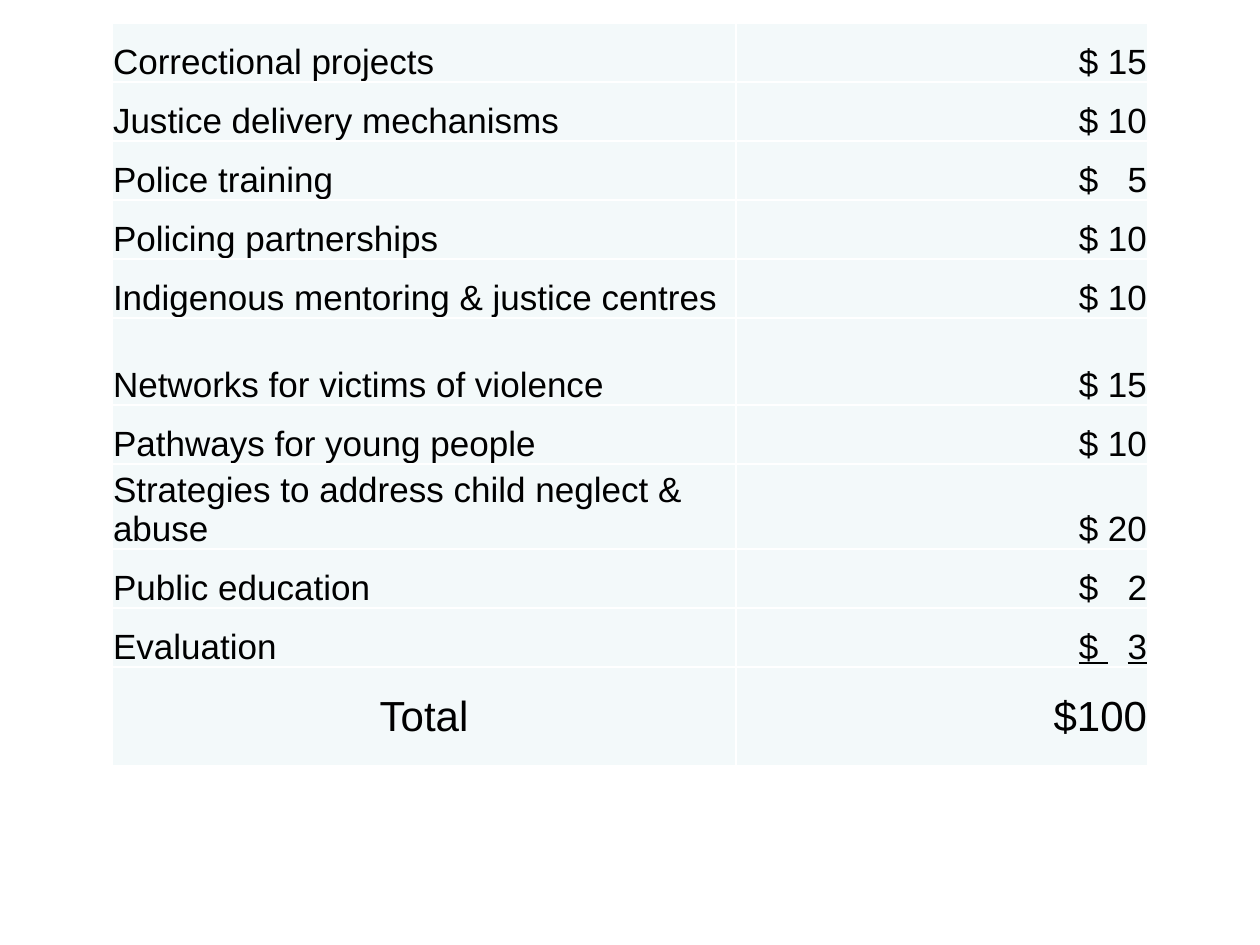
from dataclasses import dataclass

import pptx
import pptx.dml.color
import pptx.enum.text
import pptx.oxml
import pptx.oxml.ns
import pptx.util

EMU_PER_PX = 914400 / 126
COLORS = {"cell": "F3F9FA", "border": "FFFFFF", "text": "000000"}
ALIGN = pptx.enum.text.PP_ALIGN
ANCHOR = pptx.enum.text.MSO_ANCHOR
TABLE_LEFT, TABLE_TOP = 112, 23
COLUMN_WIDTHS = (624, 412)
CELL_FORMAT = {"margin_left": 1, "margin_top": 1, "margin_right": 1, "margin_bottom": 0}
DIGIT_WIDTH = 0.556  # share of the text size


@dataclass(frozen=True)
class BudgetLine:
    label: str
    amount: int
    height: int = 59
    underline: bool = False
    total: bool = False


BUDGET = (
    BudgetLine("Correctional projects", 15),
    BudgetLine("Justice delivery mechanisms", 10),
    BudgetLine("Police training", 5),
    BudgetLine("Policing partnerships", 10),
    BudgetLine("Indigenous mentoring & justice centres", 10),
    BudgetLine("Networks for victims of violence", 15, height=87),
    BudgetLine("Pathways for young people", 10),
    BudgetLine("Strategies to address child neglect & abuse", 20, height=85),
    BudgetLine("Public education", 2),
    BudgetLine("Evaluation", 3, underline=True),
    BudgetLine("Total", 100, height=99, total=True),
)


def px(length: int) -> int:
    return round(length * EMU_PER_PX)


def rgb(name: str) -> pptx.dml.color.RGBColor:
    return pptx.dml.color.RGBColor.from_string(COLORS[name])


def add_borders(cell) -> None:
    properties = cell._tc.get_or_add_tcPr()
    for position, side in enumerate(("lnL", "lnR", "lnT", "lnB")):
        properties.insert(position, pptx.oxml.parse_xml(
            f'<a:{side} {pptx.oxml.ns.nsdecls("a")} w="12700"><a:solidFill>'
            f'<a:srgbClr val="{COLORS["border"]}"/></a:solidFill></a:{side}>'))


def format_cell(cell, line: BudgetLine) -> None:
    for name, margin in CELL_FORMAT.items():
        setattr(cell, name, px(margin))
    cell.vertical_anchor = ANCHOR.MIDDLE if line.total else ANCHOR.BOTTOM
    cell.fill.solid()
    cell.fill.fore_color.rgb = rgb("cell")
    add_borders(cell)


def write(cell, parts: tuple[str, ...], align: ALIGN, size: int,
          underline: bool = False) -> None:
    paragraph = cell.text_frame.paragraphs[0]
    paragraph.alignment = align
    font_format = {"name": "Arial", "size": pptx.util.Pt(size), "underline": underline}
    for part in parts:
        run = paragraph.add_run()
        run.text = part
        for name, value in font_format.items():
            setattr(run.font, name, value)
        run.font.color.rgb = rgb("text")
        if part == " ":
            # Widen the gap by one digit so that units line up
            run._r.get_or_add_rPr().set("spc", str(round(size * DIGIT_WIDTH * 100)))


def amount_parts(line: BudgetLine) -> tuple[str, ...]:
    if line.total:
        return (f"${line.amount}",)
    if line.amount < 10:
        return ("$", " ", str(line.amount))
    return (f"$ {line.amount}",)


def add_budget_table(slide, lines: tuple[BudgetLine, ...]) -> None:
    table = slide.shapes.add_table(
        len(lines), len(COLUMN_WIDTHS), px(TABLE_LEFT), px(TABLE_TOP),
        px(sum(COLUMN_WIDTHS)), px(sum(line.height for line in lines))).table
    for option in ("first_row", "horz_banding"):
        setattr(table, option, False)
    for column, width in zip(table.columns, COLUMN_WIDTHS):
        column.width = px(width)
    for row, line in zip(table.rows, lines):
        row.height = px(line.height)
        label, amount = row.cells
        for cell in (label, amount):
            format_cell(cell, line)
        size = 24 if line.total else 20
        write(label, (line.label,), ALIGN.CENTER if line.total else ALIGN.LEFT, size)
        write(amount, amount_parts(line), ALIGN.RIGHT, size, line.underline)


def main() -> None:
    presentation = pptx.Presentation()
    presentation.slide_width = px(1260)
    presentation.slide_height = px(945)
    slide = presentation.slides.add_slide(presentation.slide_layouts[6])
    add_budget_table(slide, BUDGET)
    presentation.save("out.pptx")


if __name__ == "__main__":
    main()
